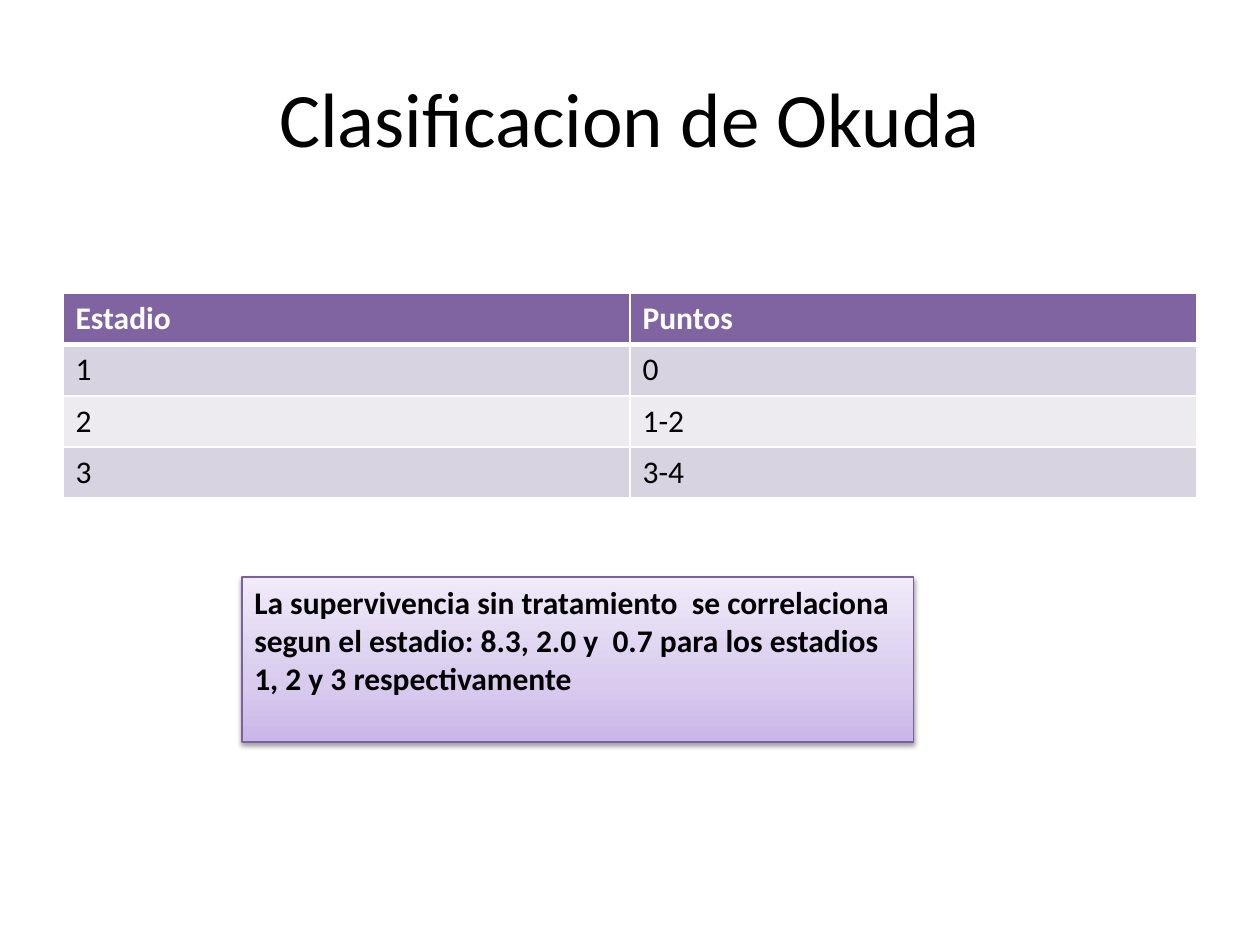
from lxml import etree
from pptx import Presentation
from pptx.dml.color import RGBColor
from pptx.enum.shapes import MSO_SHAPE
from pptx.enum.text import MSO_ANCHOR, PP_ALIGN
from pptx.oxml import parse_xml
from pptx.oxml.ns import nsdecls, qn
from pptx.util import Inches, Pt

RECTANGLE = MSO_SHAPE.RECTANGLE
TOP, MIDDLE = MSO_ANCHOR.TOP, MSO_ANCHOR.MIDDLE
LEFT, CENTER = PP_ALIGN.LEFT, PP_ALIGN.CENTER

FONT = "Calibri"
BLACK = RGBColor(0x00, 0x00, 0x00)
WHITE = RGBColor(0xFF, 0xFF, 0xFF)
PURPLE = RGBColor(0x80, 0x64, 0xA2)
OUTLINE = RGBColor(0x7D, 0x60, 0xA0)
BANDS = (RGBColor(0xD8, 0xD3, 0xE0), RGBColor(0xED, 0xEA, 0xF0))
NOTE_GRADIENT = (
    (0, RGBColor(0xC9, 0xB5, 0xE8)),
    (35, RGBColor(0xD8, 0xCB, 0xEE)),
    (100, RGBColor(0xF0, 0xEA, 0xF9)),
)

MARGIN = 0.5
CONTENT_WIDTH = 9
ROW_HEIGHT = 0.405
STAGES = (("Estadio", "Puntos"), ("1", "0"), ("2", "1-2"), ("3", "3-4"))
NOTE = (
    "La supervivencia sin tratamiento  se correlaciona segun el estadio: "
    "8.3, 2.0 y  0.7 para los estadios 1, 2 y 3 respectivamente"
)


def write_text(text_frame, text, size, color, bold=False, align=LEFT):
    text_frame.text = text
    paragraph = text_frame.paragraphs[0]
    paragraph.alignment = align
    font = paragraph.font
    font.name, font.size, font.bold = FONT, Pt(size), bold
    font.color.rgb = color


def add_title(slide, text):
    title = slide.shapes.title
    title.left, title.top = Inches(MARGIN), Inches(0.3)
    title.width, title.height = Inches(CONTENT_WIDTH), Inches(1.25)
    title.text_frame.vertical_anchor = MIDDLE
    write_text(title.text_frame, text, 44, BLACK, align=CENTER)


def set_borders(cell, widths):
    """Draw white cell borders; widths maps a side (L, R, T, B) to points."""
    properties = cell._tc.get_or_add_tcPr()
    for side, width in widths.items():
        line = etree.SubElement(properties, qn(f"a:ln{side}"), w=str(Pt(width)))
        fill = etree.SubElement(line, qn("a:solidFill"))
        etree.SubElement(fill, qn("a:srgbClr"), val=str(WHITE))


def add_stage_table(slide, rows, top):
    table = slide.shapes.add_table(
        len(rows), len(rows[0]), Inches(MARGIN), Inches(top),
        Inches(CONTENT_WIDTH), Inches(ROW_HEIGHT * len(rows)),
    ).table
    for row_index, row in enumerate(rows):
        header = row_index == 0
        fill_color = PURPLE if header else BANDS[(row_index - 1) % 2]
        for column_index, text in enumerate(row):
            cell = table.cell(row_index, column_index)
            write_text(cell.text_frame, text, 18, WHITE if header else BLACK, header)
            # The line under the header is heavier
            set_borders(cell, {
                "L": 1, "R": 1,
                "T": 3 if row_index == 1 else 1,
                "B": 3 if header else 1,
            })
            cell.fill.solid()
            cell.fill.fore_color.rgb = fill_color


def set_gradient_and_shadow(shape, stops):
    """Fill upwards through the stops and cast a soft shadow downwards."""
    stop_xml = "".join(
        f'<a:gs pos="{position * 1000}"><a:srgbClr val="{color}"/></a:gs>'
        for position, color in stops
    )
    gradient = parse_xml(
        f'<a:gradFill {nsdecls("a")} rotWithShape="1"><a:gsLst>{stop_xml}</a:gsLst>'
        '<a:lin ang="16200000" scaled="0"/></a:gradFill>'
    )
    effects = parse_xml(
        f'<a:effectLst {nsdecls("a")}><a:outerShdw blurRad="{Pt(3.1)}" '
        f'dist="{Pt(1.6)}" dir="5400000" rotWithShape="0"><a:srgbClr val="{BLACK}">'
        '<a:alpha val="38000"/></a:srgbClr></a:outerShdw></a:effectLst>'
    )
    properties = shape._element.spPr
    properties.find(qn("a:prstGeom")).addnext(gradient)
    properties.find(qn("a:ln")).addnext(effects)


def add_note(slide, text, left, top, width, height):
    note = slide.shapes.add_shape(
        RECTANGLE, Inches(left), Inches(top), Inches(width), Inches(height)
    )
    note.line.color.rgb = OUTLINE
    note.line.width = Pt(0.75)
    set_gradient_and_shadow(note, NOTE_GRADIENT)
    note.text_frame.word_wrap = True
    note.text_frame.vertical_anchor = TOP
    write_text(note.text_frame, text, 18, BLACK, bold=True)


def main():
    presentation = Presentation()
    presentation.slide_width, presentation.slide_height = Inches(10), Inches(7.5)
    title_only = presentation.slide_layouts[5]
    slide = presentation.slides.add_slide(title_only)

    add_title(slide, "Clasificacion de Okuda")
    add_stage_table(slide, STAGES, top=2.33)
    add_note(slide, NOTE, left=1.92, top=4.58, width=5.33, height=1.31)

    presentation.save("out.pptx")


if __name__ == "__main__":
    main()
